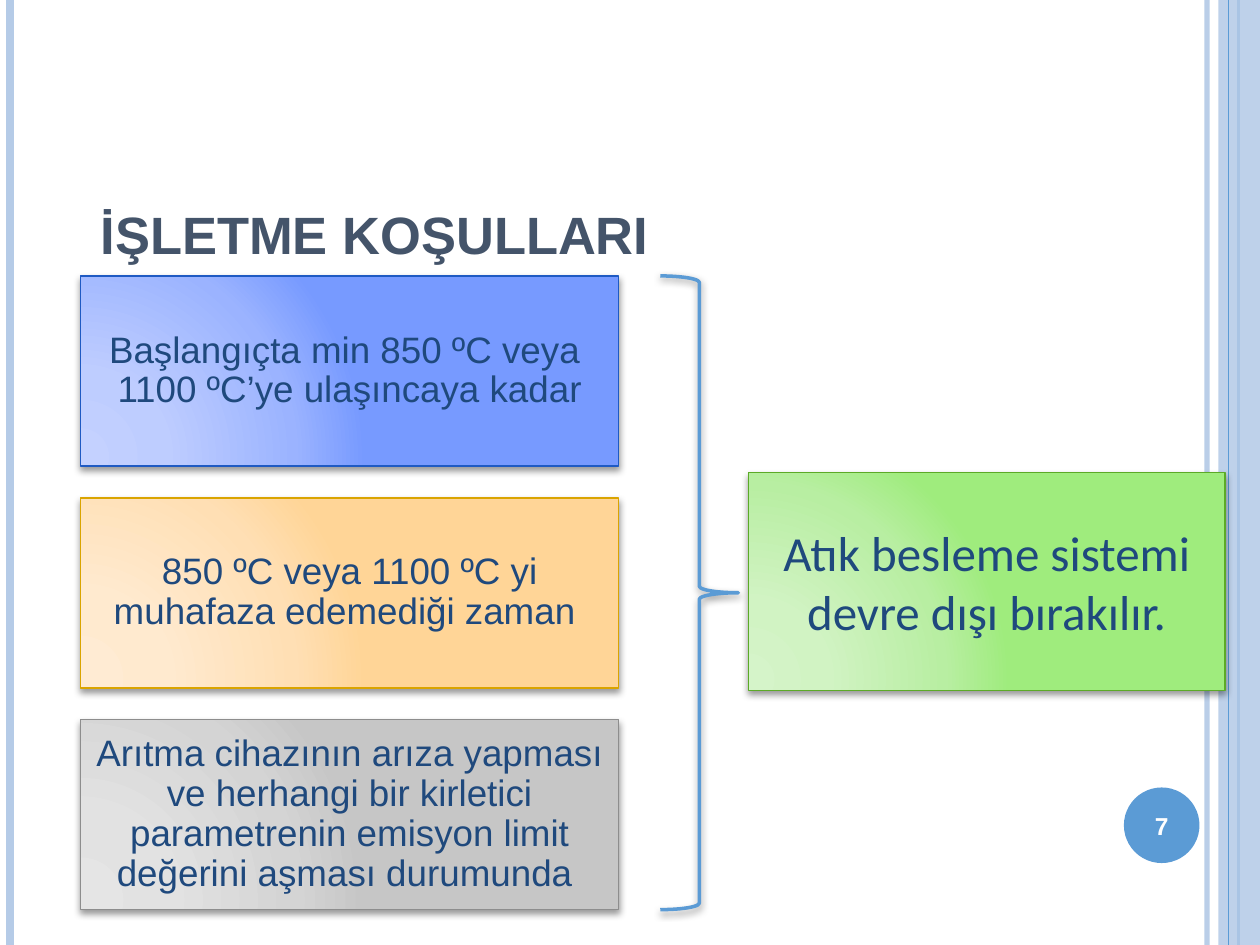
import pptx
import pptx.util
import pptx.dml.color
import pptx.enum.shapes
import pptx.enum.text
import pptx.oxml
import pptx.oxml.ns
from lxml import etree
from pptx.util import Inches, Pt

COLORS = {
    "stripe": "B5CBE7",
    "accent": "5B9BD5",
    "title": "44546A",
    "text": "1F497D",
    "white": "FFFFFF",
}
GRADIENTS = {
    "blue": (["C4D1FF", "BECDFF", "9BB3FF", "779AFF"], "1F5AC3"),
    "orange": (["FFEBD3", "FFEACF", "FFDFB4", "FFD597"], "DAA400"),
    "gray": (["E5E5E5", "E2E2E2", "D4D4D4", "C6C6C6"], "8D8D8D"),
    "green": (["D5F4C9", "D1F3C3", "B8EEA2", "9FEC7D"], "5CAA27"),
}
STOPS = [0, 30, 75, 100]
CONDITIONS = [
    ("blue", "Başlangıçta min 850 ºC veya \v1100 ºC’ye ulaşıncaya kadar"),
    ("orange", "850 ºC veya 1100 ºC yi muhafaza edemediği zaman "),
    ("gray", "Arıtma cihazının arıza yapması ve herhangi bir kirletici "
             "parametrenin emisyon limit değerini aşması durumunda "),
]
STRIPES = [
    (9.58, "stripe", 3, 93),
    (0.08, "stripe", 4.5, 100),
    (9.83, "accent", 1.5, 100),
]
SHAPES = pptx.enum.shapes.MSO_SHAPE
ANCHORS = pptx.enum.text.MSO_ANCHOR
CENTER = pptx.enum.text.PP_ALIGN.CENTER


def rgb(value):
    return pptx.dml.color.RGBColor.from_string(value)


def set_alpha(element, percent):
    for color in element.iter(pptx.oxml.ns.qn("a:srgbClr")):
        alpha = etree.SubElement(color, pptx.oxml.ns.qn("a:alpha"))
        alpha.set("val", str(percent * 1000))


def set_gradient(shape, colors):
    stops = "".join(
        f'<a:gs pos="{position * 1000}"><a:srgbClr val="{color}"/></a:gs>'
        for position, color in zip(STOPS, colors))
    gradient = pptx.oxml.parse_xml(
        f'<a:gradFill {pptx.oxml.ns.nsdecls("a")} rotWithShape="1">'
        f'<a:gsLst>{stops}</a:gsLst><a:path path="circle">'
        '<a:fillToRect l="5000" t="100000" r="120000" b="10000"/>'
        '</a:path></a:gradFill>')
    geometry = shape._element.spPr.find(pptx.oxml.ns.qn("a:prstGeom"))
    geometry.addnext(gradient)


def add_shadow(shape):
    effects = shape._element.spPr.find(pptx.oxml.ns.qn("a:effectLst"))
    effects.append(pptx.oxml.parse_xml(
        f'<a:outerShdw {pptx.oxml.ns.nsdecls("a")} blurRad="{Pt(4)}" '
        f'dist="{Pt(2)}" dir="5400000" rotWithShape="0">'
        '<a:srgbClr val="000000"><a:alpha val="40000"/></a:srgbClr>'
        '</a:outerShdw>'))


def add_shape(slide, kind, box, fill=None, line=None, width=1):
    shape = slide.shapes.add_shape(kind, *map(Inches, box))
    shape.shadow.inherit = False
    if fill:
        shape.fill.solid()
        shape.fill.fore_color.rgb = rgb(fill)
    if line:
        shape.line.color.rgb = rgb(line)
        shape.line.width = Pt(width)
    else:
        shape.line.fill.background()
    return shape


def add_stripe(slide, x, color, width, alpha):
    stripe = slide.shapes.add_connector(
        pptx.enum.shapes.MSO_CONNECTOR.STRAIGHT,
        Inches(x), 0, Inches(x), Inches(7.5))
    stripe.line.color.rgb = rgb(COLORS[color])
    stripe.line.width = Pt(width)
    properties = stripe._element.spPr
    if alpha < 100:
        set_alpha(properties, alpha)
    etree.SubElement(properties, pptx.oxml.ns.qn("a:effectLst"))


def write_text(shape, text, color, font, anchor=ANCHORS.MIDDLE,
               alignment=CENTER, spacing=None, inset=None):
    frame = shape.text_frame
    frame.word_wrap = True
    frame.vertical_anchor = anchor
    if inset is not None:
        for side in ("left", "top", "right", "bottom"):
            setattr(frame, f"margin_{side}", Inches(inset))
    paragraph = frame.paragraphs[0]
    paragraph.text = text
    paragraph.alignment = alignment
    if spacing:
        paragraph.line_spacing = spacing
    for run in paragraph.runs:
        for name, value in font.items():
            setattr(run.font, name, value)
        run.font.color.rgb = rgb(COLORS[color])


def add_card(slide, box, palette, text, font, **layout):
    colors, outline = GRADIENTS[palette]
    card = add_shape(slide, SHAPES.RECTANGLE, box, line=outline)
    set_gradient(card, colors)
    add_shadow(card)
    write_text(card, text, "text", font, **layout)


def add_frame(slide):
    for stripe in STRIPES:
        add_stripe(slide, *stripe)
    band = add_shape(slide, SHAPES.RECTANGLE, (9.67, 0, 0.33, 7.5), COLORS["stripe"])
    set_alpha(band._element.spPr, 87)
    add_stripe(slide, 9.75, "accent", 0.75, 100)
    badge = add_shape(slide, SHAPES.OVAL, (8.92, 6.25, 0.6, 0.6), COLORS["accent"])
    write_text(badge, "7", "white",
               {"size": Pt(14), "name": "Arial", "bold": True}, inset=0)


def format_title(slide, text):
    title = slide.shapes.title
    box = {"left": 0.7, "top": 0.7, "width": 8.62, "height": 1.45}
    for name, value in box.items():
        setattr(title, name, Inches(value))
    write_text(title, text, "title",
               {"size": Pt(30), "name": "Arial", "bold": True},
               anchor=ANCHORS.BOTTOM, alignment=pptx.enum.text.PP_ALIGN.LEFT)


def add_brace(slide, box):
    brace = add_shape(slide, SHAPES.RIGHT_BRACE, box, line=COLORS["accent"], width=2)
    brace.fill.background()
    add_shadow(brace)


def main():
    presentation = pptx.Presentation()
    presentation.slide_width = Inches(10)
    presentation.slide_height = Inches(7.5)
    slide = presentation.slides.add_slide(presentation.slide_layouts[5])
    add_frame(slide)
    format_title(slide, "İŞLETME KOŞULLARI")
    for index, (palette, text) in enumerate(CONDITIONS):
        add_card(slide, (0.64, 2.19 + 1.76 * index, 4.27, 1.51), palette, text,
                 {"size": Pt(21), "name": "Arial"}, spacing=0.9, inset=0.09)
    add_brace(slide, (5.24, 2.19, 0.62, 5.03))
    add_card(slide, (5.94, 3.75, 3.78, 1.73), "green",
             "Atık besleme sistemi devre dışı bırakılır.",
             {"size": Pt(28), "name": "Calibri"})
    presentation.save("out.pptx")


if __name__ == "__main__":
    main()
